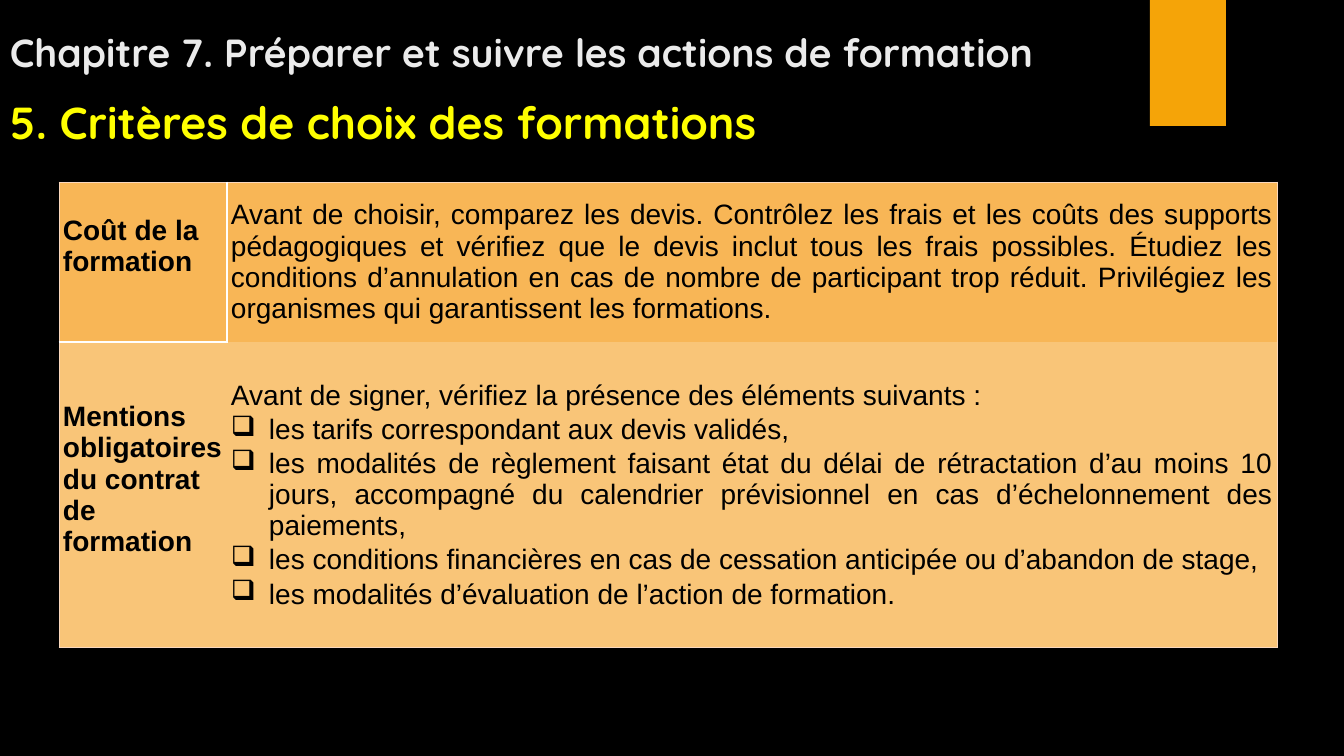
from lxml import etree
from pptx import Presentation, util as u
from pptx.dml.color import RGBColor
from pptx.enum import shapes, text
from pptx.oxml.ns import qn

# Content
CHAPTER = "Chapitre 7. Préparer et suivre les actions de formation"
SECTION = "5. Critères de choix des formations"
BULLET = "❑"
CRITERIA = [
    ("Coût de la formation",
     "Avant de choisir, comparez les devis. Contrôlez les frais et les coûts des supports "
     "pédagogiques et vérifiez que le devis inclut tous les frais possibles. Étudiez les "
     "conditions d’annulation en cas de nombre de participant trop réduit. Privilégiez les "
     "organismes qui garantissent les formations.",
     []),
    ("Mentions obligatoires du contrat de formation",
     "Avant de signer, vérifiez la présence des éléments suivants :",
     ["les tarifs correspondant aux devis validés,",
      "les modalités de règlement faisant état du délai de rétractation d’au moins 10 jours, "
      "accompagné du calendrier prévisionnel en cas d’échelonnement des paiements,",
      "les conditions financières en cas de cessation anticipée ou d’abandon de stage,",
      "les modalités d’évaluation de l’action de formation."]),
]
COLORS = {"background": "000000", "accent": "F5A408", "chapter": "EBEBEB",
          "section": "FFFF00", "body": "000000", "edge": "FAD8BD", "divider": "FFFFFF"}
ROW_FILLS = ["F8B656", "F9C578"]

# Geometry in px
SLIDE = (1344, 756)
ACCENT_BAR = (1150, 0, 76, 126)
CHAPTER_BOX = (0, 8, 1300, 72)
SECTION_BOX = (0, 81, 1300, 72)
TABLE_AT = (59, 182)
COLUMNS = [168, 1050]
ROWS = [160, 306]
CELL_MARGIN = 4
LABEL_LIFT = 31
BULLET_INDENT = 38


def px(n):
    return round(n * 9525 * 96 / 100.8)


def rgb(name):
    return RGBColor.from_string(COLORS[name])


def write(frame, line, size=20, font="Arial", color="body", bold=False,
          align=None, after=0, bullet=None, first=True):
    paragraph = frame.paragraphs[0] if first else frame.add_paragraph()
    if bullet:
        props = paragraph._p.get_or_add_pPr()
        props.set("marL", str(px(BULLET_INDENT)))
        props.set("indent", str(-px(BULLET_INDENT)))
        etree.SubElement(props, qn("a:buChar")).set("char", bullet)
    paragraph.alignment = align
    paragraph.space_after = u.Pt(after)
    run = paragraph.add_run()
    run.text = line
    run.font.size, run.font.name, run.font.bold = u.Pt(size), font, bold
    run.font.color.rgb = rgb(color)


def set_border(cell, side, color=None, width=0):
    line = etree.SubElement(cell._tc.get_or_add_tcPr(), qn("a:ln" + side))
    line.set("w", str(u.Pt(width)))
    if color:
        fill = etree.SubElement(line, qn("a:solidFill"))
        etree.SubElement(fill, qn("a:srgbClr")).set("val", COLORS[color])
    else:
        etree.SubElement(line, qn("a:noFill"))


def cell_borders(row, column):
    """Thin outer edge; white dividers only around the first label."""
    edge, beside, below = ("edge", 0.75), ("divider", 1.5), ("divider", 2.25)
    none = (None, 0)
    return {
        "L": edge if column == 0 else beside if row == 0 else none,
        "R": edge if column == 1 else beside if row == 0 else none,
        "T": edge if row == 0 else below if column == 0 else none,
        "B": edge if row == 1 else below if column == 0 else none,
    }


def main():
    deck = Presentation()
    deck.slide_width, deck.slide_height = map(px, SLIDE)
    slide = deck.slides.add_slide(deck.slide_layouts[6])
    slide.background.fill.solid()
    slide.background.fill.fore_color.rgb = rgb("background")

    # Accent bar
    bar = slide.shapes.add_shape(shapes.MSO_SHAPE.RECTANGLE, *map(px, ACCENT_BAR))
    bar.shadow.inherit = False
    bar.fill.solid()
    bar.fill.fore_color.rgb = rgb("accent")
    bar.line.fill.background()

    # Headings
    for heading, box, size, color in [(CHAPTER, CHAPTER_BOX, 28, "chapter"),
                                      (SECTION, SECTION_BOX, 32, "section")]:
        frame = slide.shapes.add_textbox(*map(px, box)).text_frame
        frame.word_wrap = True
        frame.vertical_anchor = text.MSO_ANCHOR.BOTTOM
        write(frame, heading, size=size, font="Quicksand", color=color, bold=True)

    # Criteria table
    criteria = slide.shapes.add_table(len(ROWS), len(COLUMNS), *map(px, TABLE_AT),
                                      px(sum(COLUMNS)), px(sum(ROWS))).table
    criteria.first_row = criteria.horz_banding = False
    for column, width in zip(criteria.columns, COLUMNS):
        column.width = px(width)
    for r, (label, intro, points) in enumerate(CRITERIA):
        criteria.rows[r].height = px(ROWS[r])
        for c in range(len(COLUMNS)):
            cell = criteria.cell(r, c)
            cell.margin_left = cell.margin_right = px(CELL_MARGIN)
            cell.margin_top = 0
            cell.margin_bottom = px(LABEL_LIFT if c == 0 else 0)
            cell.vertical_anchor = text.MSO_ANCHOR.MIDDLE
            for side, border in cell_borders(r, c).items():
                set_border(cell, side, *border)
            cell.fill.solid()
            cell.fill.fore_color.rgb = RGBColor.from_string(ROW_FILLS[r])
        write(criteria.cell(r, 0).text_frame, label, bold=True)
        details = criteria.cell(r, 1).text_frame
        justify = text.PP_ALIGN.JUSTIFY
        write(details, intro, align=justify, after=2)
        for point in points:
            write(details, point, align=justify, after=2, bullet=BULLET, first=False)

    deck.save("out.pptx")


if __name__ == "__main__":
    main()
